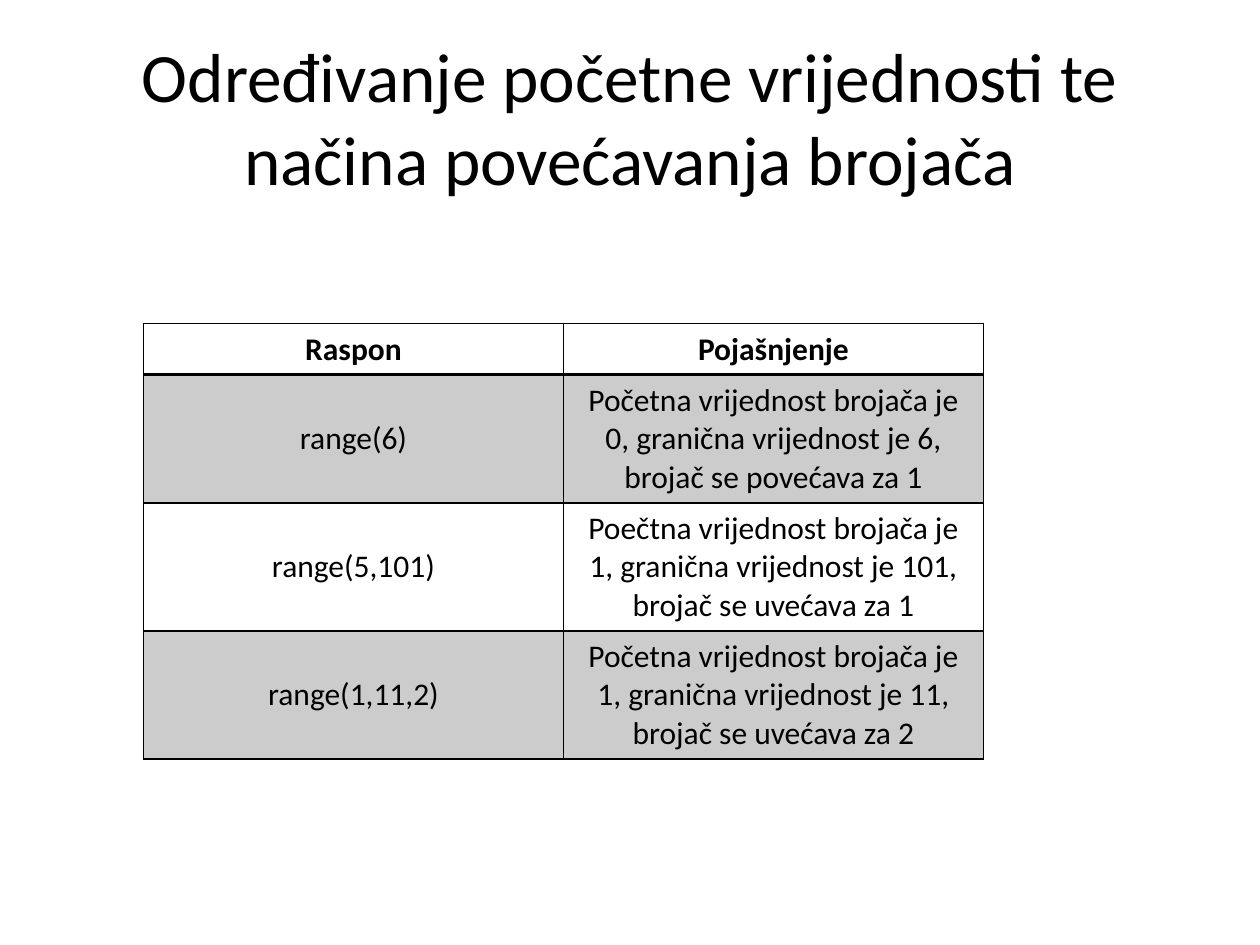
from typing import NamedTuple

from lxml import etree
from pptx import Presentation
from pptx.dml.color import RGBColor
from pptx.enum.text import MSO_ANCHOR, MSO_AUTO_SIZE, PP_ALIGN
from pptx.oxml.ns import qn
from pptx.util import Pt

CENTER = PP_ALIGN.CENTER
MIDDLE = MSO_ANCHOR.MIDDLE
NO_AUTOFIT = MSO_AUTO_SIZE.NONE
TITLE_ONLY = 5
FONT = "Calibri"
COLORS = {"ink": "000000"}
BAND_OPACITY = 20  # percent
COLUMN_WIDTH = 240
HEADER_HEIGHT, BODY_HEIGHT = 29.2, 73


class RangeRow(NamedTuple):
    span: str
    explanation: str


ROWS = [
    RangeRow("Raspon", "Pojašnjenje"),
    RangeRow("range(6)", "Početna vrijednost brojača je 0, granična vrijednost je 6, "
             "brojač se povećava za 1"),
    RangeRow("range(5,101)", "Poečtna vrijednost brojača je 1, granična vrijednost je 101, "
             "brojač se uvećava za 1"),
    RangeRow("range(1,11,2)", "Početna vrijednost brojača je 1, granična vrijednost je 11, "
             "brojač se uvećava za 2"),
]


def write_text(frame, text: str, size: float, bold: bool = False) -> None:
    frame.text = text
    para = frame.paragraphs[0]
    para.alignment = CENTER
    para.font.name = FONT
    para.font.size = Pt(size)
    para.font.bold = bold
    para.font.color.rgb = RGBColor.from_string(COLORS["ink"])


def set_borders(cell, widths: dict[str, float]) -> None:
    """Add the cell's border lines ahead of its fill, as the schema requires."""
    properties = cell._tc.get_or_add_tcPr()
    for position, (side, width) in enumerate(widths.items()):
        line = etree.Element(qn(f"a:ln{side}"), w=str(Pt(width)))
        fill = etree.SubElement(line, qn("a:solidFill"))
        etree.SubElement(fill, qn("a:srgbClr"), val=COLORS["ink"])
        properties.insert(position, line)


def fill_cell(cell, banded: bool) -> None:
    if not banded:
        cell.fill.background()
        return
    cell.fill.solid()
    cell.fill.fore_color.rgb = RGBColor.from_string(COLORS["ink"])
    color = cell._tc.tcPr.find(f".//{qn('a:srgbClr')}")
    etree.SubElement(color, qn("a:alpha"), val=str(BAND_OPACITY * 1000))


def add_range_table(slide, left: float, top: float, rows: list[RangeRow]) -> None:
    column_count = len(RangeRow._fields)
    height = HEADER_HEIGHT + BODY_HEIGHT * (len(rows) - 1)
    table = slide.shapes.add_table(len(rows), column_count, Pt(left), Pt(top),
                                   Pt(COLUMN_WIDTH * column_count), Pt(height)).table
    for row_index, row in enumerate(rows):
        header = row_index == 0
        table.rows[row_index].height = Pt(HEADER_HEIGHT if header else BODY_HEIGHT)
        for column_index, text in enumerate(row):
            cell = table.cell(row_index, column_index)
            cell.vertical_anchor = MIDDLE
            write_text(cell.text_frame, text, 18, bold=header)
            fill_cell(cell, banded=row_index % 2 == 1)
            set_borders(cell, {"L": 1, "R": 1, "T": 2 if row_index == 1 else 1,
                               "B": 2 if header else 1})


def main() -> None:
    deck = Presentation()
    deck.slide_width, deck.slide_height = Pt(720), Pt(540)
    slide = deck.slides.add_slide(deck.slide_layouts[TITLE_ONLY])

    # Title
    title = slide.shapes.title
    title.left, title.top, title.width, title.height = Pt(36), Pt(21.6), Pt(648), Pt(90)
    title.text_frame.auto_size = NO_AUTOFIT
    title.text_frame.vertical_anchor = MIDDLE
    write_text(title.text_frame,
               "Određivanje početne vrijednosti te načina povećavanja brojača", 39.6)

    # Table of ranges
    add_range_table(slide, 82, 185, ROWS)

    deck.save("out.pptx")


if __name__ == "__main__":
    main()
